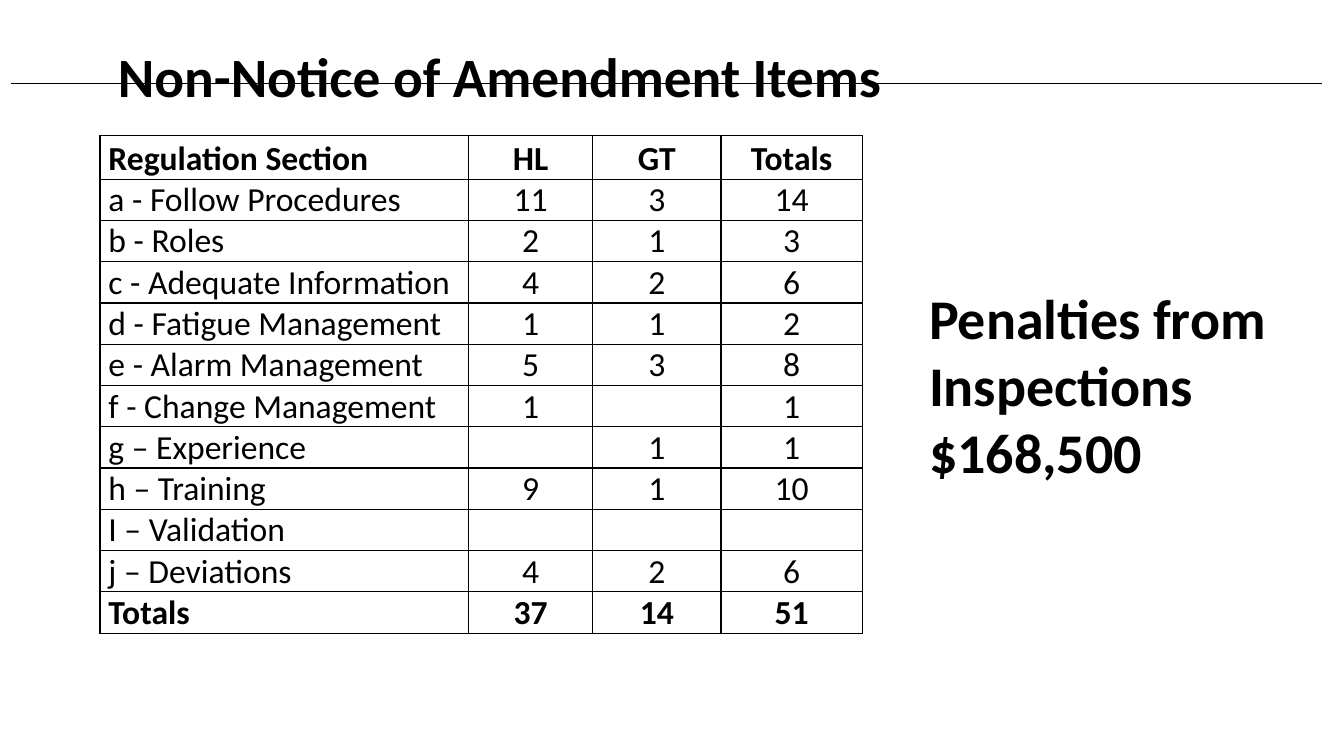
from lxml import etree
from pptx import Presentation
from pptx.dml.color import RGBColor
from pptx.enum import shapes, text
from pptx.oxml import ns
from pptx.util import Pt

BLACK = RGBColor(0, 0, 0)
FONT = "Calibri"
COLUMN_WIDTHS = [263, 89, 91.5, 101]
HEADER_HEIGHT, ROW_HEIGHT = 31, 29.5
SECTIONS = [
    ("Regulation Section", "HL", "GT", "Totals"),
    ("a - Follow Procedures", "11", "3", "14"),
    ("b - Roles", "2", "1", "3"),
    ("c - Adequate Information", "4", "2", "6"),
    ("d - Fatigue Management", "1", "1", "2"),
    ("e - Alarm Management", "5", "3", "8"),
    ("f - Change Management", "1", "", "1"),
    ("g – Experience", "", "1", "1"),
    ("h – Training", "9", "1", "10"),
    ("I – Validation", "", "", ""),
    ("j – Deviations", "4", "2", "6"),
    ("Totals", "37", "14", "51"),
]


def write(tf, words, size, bold=True, align=text.PP_ALIGN.LEFT):
    tf.text = words
    p = tf.paragraphs[0]
    p.alignment = align
    for r in p.runs:
        r.font.name, r.font.size, r.font.bold = FONT, Pt(size), bold
        r.font.color.rgb = BLACK


def add_words(slide, box, words, size, align, anchor):
    tf = slide.shapes.add_textbox(*(Pt(v) for v in box)).text_frame
    tf.word_wrap = True
    tf.vertical_anchor = anchor
    write(tf, words, size, align=align)


def add_rule(slide, left, top, width):
    line = slide.shapes.add_connector(
        shapes.MSO_CONNECTOR.STRAIGHT, Pt(left), Pt(top), Pt(left + width), Pt(top))
    line.line.color.rgb = BLACK
    line.line.width = Pt(0.75)
    etree.SubElement(line._element.spPr, ns.qn("a:effectLst"))


def add_borders(cell):
    tc_pr = cell._tc.get_or_add_tcPr()
    for side in ("a:lnL", "a:lnR", "a:lnT", "a:lnB"):
        ln = etree.SubElement(tc_pr, ns.qn(side), w=str(Pt(1)))
        fill = etree.SubElement(ln, ns.qn("a:solidFill"))
        etree.SubElement(fill, ns.qn("a:srgbClr"), val=str(BLACK))


def add_section_table(slide, left, top):
    last = len(SECTIONS) - 1
    height = HEADER_HEIGHT + last * ROW_HEIGHT
    table = slide.shapes.add_table(
        len(SECTIONS), len(COLUMN_WIDTHS), Pt(left), Pt(top),
        Pt(sum(COLUMN_WIDTHS)), Pt(height)).table
    table.first_row = table.horz_banding = False
    for column, width in zip(table.columns, COLUMN_WIDTHS):
        column.width = Pt(width)
    for i, values in enumerate(SECTIONS):
        table.rows[i].height = Pt(ROW_HEIGHT if i else HEADER_HEIGHT)
        for j, value in enumerate(values):
            cell = table.cell(i, j)
            cell.margin_left = Pt(0.5 if j else 6)
            cell.margin_right = cell.margin_top = Pt(0.5)
            cell.margin_bottom = 0
            cell.vertical_anchor = text.MSO_ANCHOR.BOTTOM
            add_borders(cell)
            cell.fill.background()
            align = text.PP_ALIGN.CENTER if j else text.PP_ALIGN.LEFT
            write(cell.text_frame, value, 24, i in (0, last), align)


def build_slide(prs):
    slide = prs.slides.add_slide(prs.slide_layouts[6])
    # Title and the rule behind it
    add_rule(slide, 8, 60, 936)
    add_words(slide, (71.5, 27.5, 571, 52), "Non-Notice of Amendment Items",
              39.6, text.PP_ALIGN.CENTER, text.MSO_ANCHOR.MIDDLE)
    # Counts by regulation section
    add_section_table(slide, 71.5, 97)
    # Penalty total
    add_words(slide, (656.5, 199, 261.5, 152.5), "Penalties from Inspections $168,500",
              40, text.PP_ALIGN.LEFT, text.MSO_ANCHOR.TOP)


def main():
    prs = Presentation()
    prs.slide_width, prs.slide_height = Pt(960), Pt(540)
    build_slide(prs)
    prs.save("out.pptx")


if __name__ == "__main__":
    main()
